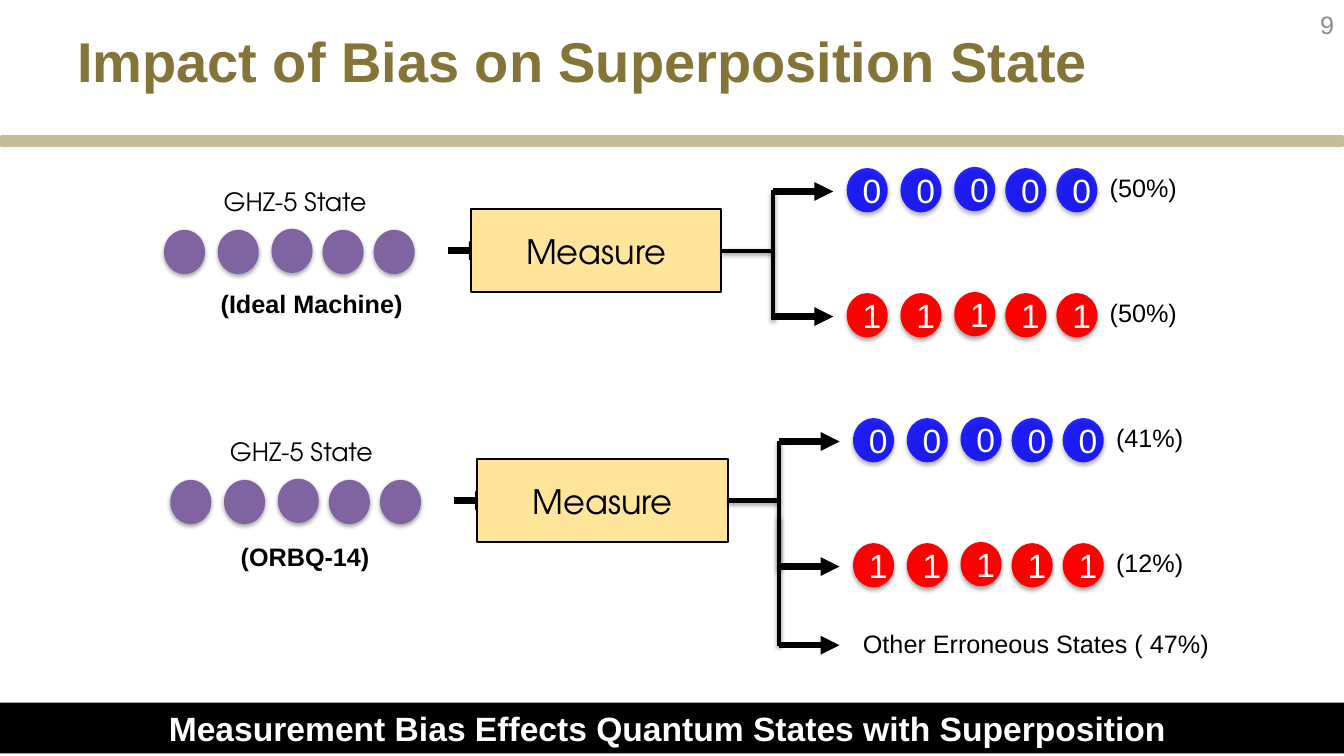
from dataclasses import dataclass

from lxml import etree
from pptx import Presentation
from pptx.dml.color import RGBColor
from pptx.enum.shapes import MSO_CONNECTOR, MSO_SHAPE
from pptx.enum.text import MSO_ANCHOR, PP_ALIGN
from pptx.oxml.ns import qn
from pptx.util import Emu, Inches, Pt

OVAL, RECT, ROUND = MSO_SHAPE.OVAL, MSO_SHAPE.RECTANGLE, MSO_SHAPE.ROUNDED_RECTANGLE
STRAIGHT = MSO_CONNECTOR.STRAIGHT
LEFT, CENTER, RIGHT = PP_ALIGN.LEFT, PP_ALIGN.CENTER, PP_ALIGN.RIGHT
TOP, MIDDLE = MSO_ANCHOR.TOP, MSO_ANCHOR.MIDDLE

SANS, GEOMETRIC = "Arial", "TeX Gyre Adventor"
COLORS = {
    "black": "000000", "white": "FFFFFF", "gold": "857437", "rule": "C4BD97",
    "qubit": "8064A2", "zero": "0000FF", "one": "FF0000", "box": "FEE599",
    "number": "8C8C8C",
}

# All lengths below are percent of the slide's width (x) or height (y)
W, H = Inches(13.333), Inches(7.5)
QUBIT_W, QUBIT_H = 3.05, 5.87
QUBIT_STEPS = [(0, 0), (4, 0), (8, -0.15), (11.8, 0), (15.6, 0)]
STATE_X, STATE_Y = 12.2, 30.4
BOX_X, BOX_W, BOX_H = 35.03, 18.65, 11
AXIS_Y = 33.15
TRUNK_X, BRANCH_END, OUTCOME_X = 57.5, 62, 63
LABEL_H = 5.33


@dataclass
class Outcome:
    """One branch after the measurement; y is its arrow's height."""
    y: float
    label: str
    digit: str = ""


@dataclass
class Circuit:
    """One measured state, shifted by dx and dy."""
    dx: float
    dy: float
    caption: str
    caption_box: tuple[float, float, float]
    trunks: list[tuple[float, float]]
    outcomes: list[Outcome]


CIRCUITS = [
    Circuit(0, 0, "(Ideal Machine)", (15.68, 37.47, 16), [(25.2, 42.27)],
            [Outcome(25.33, "(50%)", "0"), Outcome(41.87, "(50%)", "1")]),
    Circuit(0.47, 33.07, "(ORBQ-14)", (16.7, 37.87, 13),
            [(25.2, 42.27), (35.33, 52.4)],
            [Outcome(25.33, "(41%)", "0"), Outcome(41.87, "(12%)", "1"),
             Outcome(52.27, "Other Erroneous States ( 47%)")]),
]

prs = Presentation()
prs.slide_width, prs.slide_height = W, H
shapes = prs.slides.add_slide(prs.slide_layouts[6]).shapes


def px(x: float) -> Emu:
    return Emu(round(W * x / 100))


def py(y: float) -> Emu:
    return Emu(round(H * y / 100))


def rgb(name: str) -> RGBColor:
    return RGBColor.from_string(COLORS[name])


def cast_shadow(effects, alpha: int, dist: float) -> None:
    shadow = etree.SubElement(effects, qn("a:outerShdw"), blurRad=str(Pt(3.1)),
                              dist=str(Pt(dist)), dir="5400000", rotWithShape="0")
    color = etree.SubElement(shadow, qn("a:srgbClr"), val=COLORS["black"])
    etree.SubElement(color, qn("a:alpha"), val=str(alpha * 1000))


def write(sp, text: str, size: float, color: str, font: str = SANS,
          bold: bool = False, align=LEFT, anchor=TOP) -> None:
    tf = sp.text_frame
    tf.word_wrap, tf.vertical_anchor = True, anchor
    p = tf.paragraphs[0]
    p.alignment = align
    r = p.add_run()
    r.text = text
    r.font.size, r.font.name, r.font.bold = Pt(size), font, bold
    r.font.color.rgb = rgb(color)


def add_label(x: float, y: float, w: float, h: float, text: str,
              size: float = 18, color: str = "black", **style) -> None:
    write(shapes.add_textbox(px(x), py(y), px(w), py(h)), text, size, color, **style)


def add_block(kind, x: float, y: float, w: float, h: float, fill: str):
    sp = shapes.add_shape(kind, px(x), py(y), px(w), py(h))
    sp.shadow.inherit = False
    sp.fill.solid()
    sp.fill.fore_color.rgb = rgb(fill)
    sp.line.fill.background()
    return sp


def add_line(x1: float, y1: float, x2: float, y2: float, arrow: bool = False):
    s = shapes.add_connector(STRAIGHT, px(x1), py(y1), px(x2), py(y2))
    s.line.color.rgb = rgb("black")
    s.line.width = Pt(4.5 if arrow else 3)
    effects = etree.SubElement(s._element.spPr, qn("a:effectLst"))
    if arrow:
        etree.SubElement(s.line._get_or_add_ln(), qn("a:tailEnd"), type="triangle")
    else:
        cast_shadow(effects, 38, 1.6)
    return s


def add_qubits(x: float, y: float, fill: str, digit: str = "") -> None:
    for step_x, step_y in QUBIT_STEPS:
        sp = add_block(OVAL, x + step_x, y + step_y, QUBIT_W, QUBIT_H, fill)
        cast_shadow(sp._element.spPr.find(qn("a:effectLst")), 35, 1.8)
        if fill == "zero":
            color = sp._element.spPr.find(qn("a:solidFill"))[0]
            etree.SubElement(color, qn("a:alpha"), val="84000")
        if digit:
            write(sp, digit, 24, "white", align=CENTER, anchor=MIDDLE)


def add_circuit(c: Circuit) -> None:
    # Prepared state
    add_label(15.9 + c.dx, 24 + c.dy, 14, LABEL_H, "GHZ-5 State", font=GEOMETRIC)
    add_qubits(STATE_X + c.dx, STATE_Y + c.dy, "qubit")
    x, y, w = c.caption_box
    add_label(x + c.dx, y + c.dy, w, LABEL_H, c.caption, bold=True)

    # Measurement
    axis, trunk = AXIS_Y + c.dy, TRUNK_X + c.dx
    add_line(33.3 + c.dx, axis, 36.3 + c.dx, axis, arrow=True)
    box = add_block(RECT, BOX_X + c.dx, axis - BOX_H / 2, BOX_W, BOX_H, "box")
    box.line.color.rgb = rgb("black")
    box.line.width = Pt(1.5)
    write(box, "Measure", 24, "black", GEOMETRIC, align=CENTER, anchor=MIDDLE)
    stem = add_line(trunk, axis, BOX_X + BOX_W + c.dx, axis)
    stem.end_connect(box, 3)

    # Outcomes
    for top, bottom in c.trunks:
        add_line(trunk, top + c.dy, trunk, bottom + c.dy)
    for o in c.outcomes:
        y, x = o.y + c.dy, OUTCOME_X + c.dx
        add_line(trunk, y, BRANCH_END + c.dx, y, arrow=True)
        if o.digit:
            add_qubits(x, y - 3.1, "zero" if o.digit == "0" else "one", o.digit)
            add_label(x + 18.83, y - 3.2, 9.23, LABEL_H, o.label)
        else:
            add_label(x, y - 2.93, 33.45, LABEL_H, o.label)


# Heading
add_block(ROUND, 0, 17.87, 100, 1.6, "rule")
add_label(5, 2.8, 86.25, 16.67, "Impact of Bias on Superposition State",
          40, "gold", bold=True)
add_label(96, 0, 4, 6.4, "9", 18, "number", align=RIGHT, anchor=MIDDLE)

# Circuits
for circuit in CIRCUITS:
    add_circuit(circuit)

# Takeaway
takeaway = add_block(RECT, 0, 92.93, 100, 6.73, "black")
write(takeaway, "Measurement Bias Effects Quantum States with Superposition ",
      24, "white", bold=True, align=CENTER)

prs.save("out.pptx")
